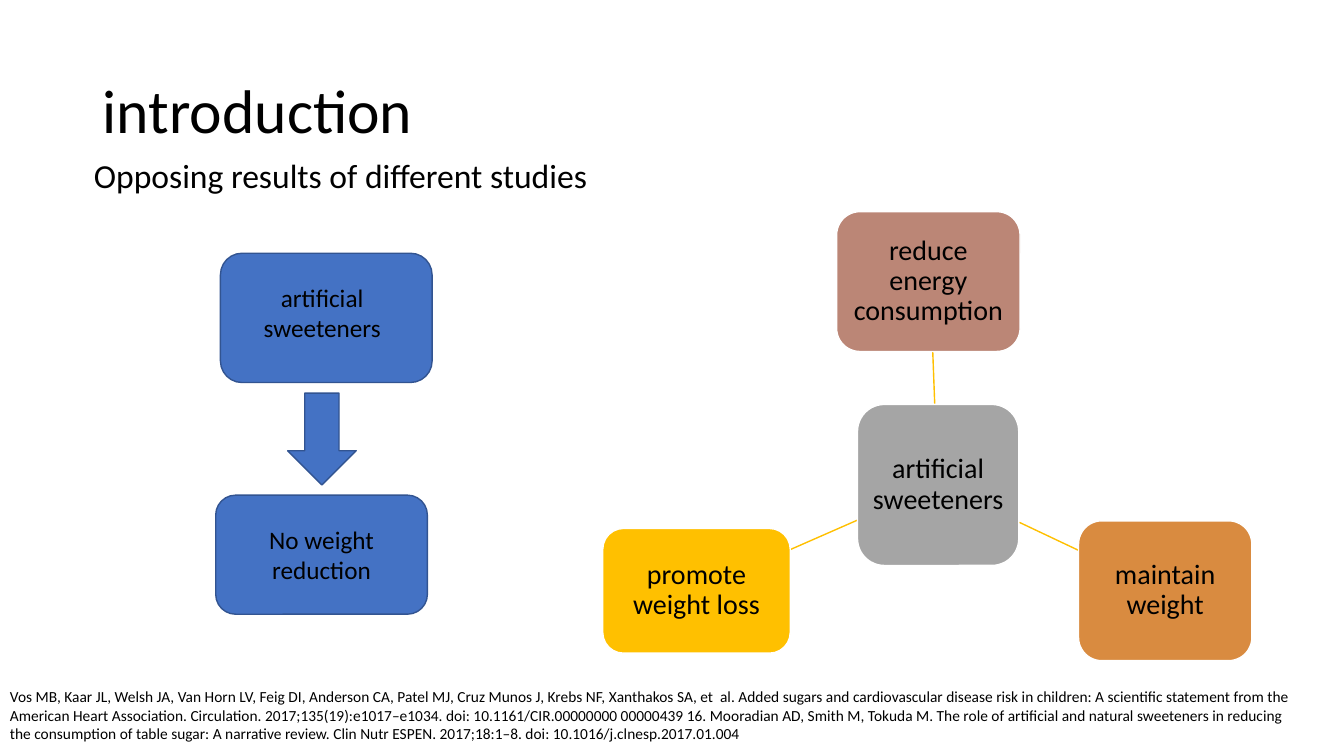
from dataclasses import dataclass

from lxml.etree import SubElement
from pptx import Presentation
from pptx.dml.color import RGBColor
from pptx.enum.shapes import MSO_CONNECTOR, MSO_SHAPE
from pptx.enum.text import MSO_ANCHOR, PP_ALIGN
from pptx.oxml.ns import qn
from pptx.util import Inches, Pt


@dataclass(frozen=True)
class Theme:
    """Fonts, type sizes and colours of the slide."""
    font: str = "Calibri"
    title: int = 44
    lead: int = 24
    node: int = 20
    step: int = 18
    note: int = 11
    ink: str = "000000"
    white: str = "FFFFFF"
    blue: str = "4472C4"
    navy: str = "325491"
    gray: str = "A5A5A5"
    rose: str = "BB8676"
    amber: str = "D98B40"
    gold: str = "FFC000"


THEME = Theme()
WIDTH, HEIGHT = Inches(13.33), Inches(7.5)
NOTE = (
    "Vos MB, Kaar JL, Welsh JA, Van Horn LV, Feig DI, Anderson CA, Patel MJ, "
    "Cruz Munos J, Krebs NF, Xanthakos SA, et\u00a0 al. Added sugars and "
    "cardiovascular disease risk in children: A scientific statement from the "
    "American Heart Association. Circulation. 2017;135(19):e1017–e1034. "
    "doi: 10.1161/CIR.00000000 00000439 16. Mooradian AD, Smith M, Tokuda M. "
    "The role of artificial and natural sweeteners in reducing the consumption "
    "of table sugar: A narrative review. Clin Nutr ESPEN. 2017;18:1–8. "
    "doi: 10.1016/j.clnesp.2017.01.004"
)
NODES = [
    ("artificial sweeteners", THEME.gray, (63.8, 53.5, 12, 21.3)),
    ("reduce energy consumption", THEME.rose, (62.25, 28, 13.65, 18.5)),
    ("maintain weight", THEME.amber, (80.25, 68.9, 12.9, 18.5)),
    ("promote weight loss", THEME.gold, (44.85, 69.9, 13.95, 16.5)),
]
SPOKES = [
    (69.55, 53.5, 69.4, 46.4),
    (75.85, 69.1, 80.25, 72.8),
    (63.8, 68.8, 58.8, 72.7),
]


def place(*shares):
    """Turn percentages of width and height, in turn, into lengths."""
    return [int(s * (HEIGHT if i % 2 else WIDTH) / 100)
            for i, s in enumerate(shares)]


def write(frame, text, size, align=PP_ALIGN.LEFT, gap=1.0):
    """Put one formatted run into a text frame."""
    frame.word_wrap = True
    par = frame.paragraphs[0]
    par.alignment, par.line_spacing = align, gap
    run = par.add_run()
    run.text = text
    run.font.name, run.font.size = THEME.font, Pt(size)
    run.font.color.rgb = RGBColor.from_string(THEME.ink)


def head(slide, text, box):
    """Move and fill the title placeholder."""
    title = slide.shapes.title
    title.left, title.top, title.width, title.height = place(*box)
    title.text_frame.vertical_anchor = MSO_ANCHOR.MIDDLE
    write(title.text_frame, text, THEME.title, gap=0.9)


def label(slide, text, size, box):
    """Add a plain text box."""
    write(slide.shapes.add_textbox(*place(*box)).text_frame, text, size)


def block(slide, kind, box, fill, edge):
    """Add a filled and outlined preset shape."""
    shape = slide.shapes.add_shape(kind, *place(*box))
    shape.shadow.inherit = False
    shape.fill.solid()
    shape.fill.fore_color.rgb = RGBColor.from_string(fill)
    shape.line.color.rgb = RGBColor.from_string(edge)
    shape.line.width = Pt(1)
    return shape


def card(slide, text, size, box, fill, edge, gap=1.0, inset=(0.1, 0.05, 0.1, 0.05)):
    """Add a rounded box with centred text."""
    frame = block(slide, MSO_SHAPE.ROUNDED_RECTANGLE, box, fill, edge).text_frame
    frame.vertical_anchor = MSO_ANCHOR.MIDDLE
    (frame.margin_left, frame.margin_top,
     frame.margin_right, frame.margin_bottom) = map(Inches, inset)
    write(frame, text, size, PP_ALIGN.CENTER, gap)


def spoke(slide, ends):
    """Add a thin line from the hub to a node."""
    line = slide.shapes.add_connector(MSO_CONNECTOR.STRAIGHT, *place(*ends))
    line.line.color.rgb = RGBColor.from_string(THEME.gold)
    line.line.width = Pt(1)
    SubElement(line._element.spPr, qn("a:effectLst"))


def main():
    """Build and save the slide."""
    deck = Presentation()
    deck.slide_width, deck.slide_height = WIDTH, HEIGHT
    slide = deck.slides.add_slide(deck.slide_layouts[5])
    head(slide, "introduction", (6.9, 5.35, 86.25, 19.35))
    for ends in SPOKES:
        spoke(slide, ends)
    for text, fill, box in NODES:
        card(slide, text, THEME.node, box, fill, THEME.white, 0.9, (0.06,) * 4)
    card(slide, "artificial sweeteners", THEME.step, (16.4, 33.5, 15.75, 17.1),
         THEME.blue, THEME.navy, inset=(0.1, 0.05, 0.18, 0.15))
    block(slide, MSO_SHAPE.DOWN_ARROW, (21.4, 52, 5.1, 12.15),
          THEME.blue, THEME.navy)
    card(slide, "No weight reduction", THEME.step, (16.05, 65.5, 15.75, 15.75),
         THEME.blue, THEME.navy)
    label(slide, "Opposing results of different studies", THEME.lead,
          (6.25, 19.9, 38.65, 6.7))
    label(slide, NOTE, THEME.note, (0, 90.25, 96.9, 8.8))
    deck.save("out.pptx")


if __name__ == "__main__":
    main()
